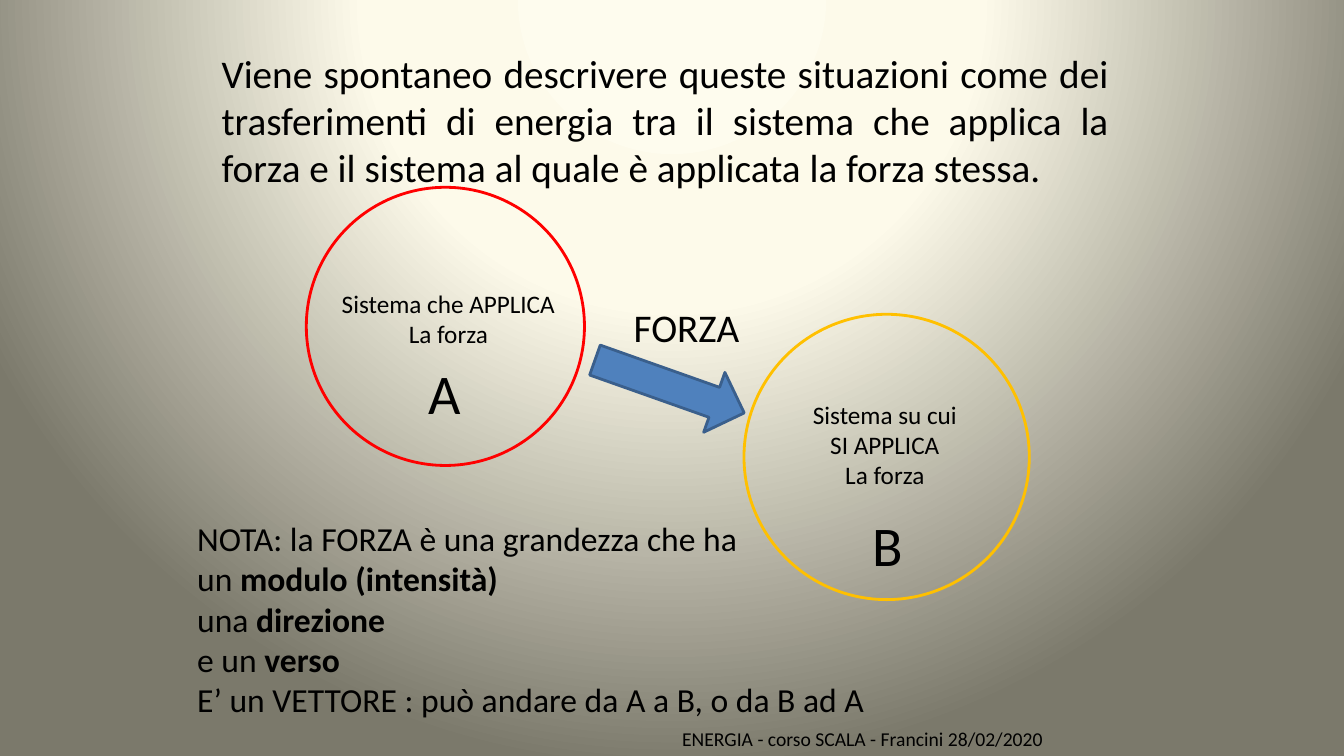
from pptx import Presentation
from pptx import util as u
from pptx.dml.color import RGBColor
from pptx.enum import shapes, text
from pptx.oxml import parse_xml
from pptx.oxml.ns import nsdecls

BLACK = RGBColor(0x00, 0x00, 0x00)
RED = RGBColor(0xFF, 0x00, 0x00)
AMBER = RGBColor(0xFF, 0xC0, 0x00)
BLUE = RGBColor(0x4F, 0x81, 0xBD)
DARK_BLUE = RGBColor(0x3A, 0x5F, 0x8C)
GLOW = [(0, RGBColor(0xFE, 0xFC, 0xEE)), (40, RGBColor(0xFD, 0xFA, 0xEA)),
        (100, RGBColor(0x7B, 0x79, 0x6B))]
LEFT, CENTER = text.PP_ALIGN.LEFT, text.PP_ALIGN.CENTER


def write(frame, lines, size, align):
    """Fill a frame; each line is a list of runs, every second run is bold."""
    for number, line in enumerate(lines):
        paragraph = frame.paragraphs[0] if number == 0 else frame.add_paragraph()
        paragraph.alignment = align
        for position, words in enumerate(line):
            run = paragraph.add_run()
            run.text = words
            run.font.color.rgb = BLACK
            style = {"name": "Calibri", "size": u.Pt(size), "bold": position % 2 == 1}
            for key, value in style.items():
                setattr(run.font, key, value)


def outline(kind, box, color):
    shape = slide.shapes.add_shape(kind, *map(u.Cm, box))
    shape.shadow.inherit = False
    shape.fill.background()
    shape.line.color.rgb = color
    shape.line.width = u.Pt(2)
    return shape


prs = Presentation()
prs.slide_width, prs.slide_height = u.Cm(33.87), u.Cm(19.05)
slide = prs.slides.add_slide(prs.slide_layouts[1])
title = slide.shapes.title.element
title.getparent().remove(title)

# Background: light glow from above the slide
slide.background.fill.gradient()
linear = next(slide.background._cSld.iter("{*}gradFill"))
stops = "".join(f'<a:gs pos="{place * 1000}"><a:srgbClr val="{color}"/></a:gs>'
                for place, color in GLOW)
linear.getparent().replace(linear, parse_xml(
    f'<a:gradFill {nsdecls("a")} rotWithShape="1"><a:gsLst>{stops}</a:gsLst>'
    '<a:path path="circle"><a:fillToRect l="50000" t="-80000" r="50000" b="180000"/>'
    '</a:path></a:gradFill>'))

# Introduction
intro = slide.placeholders[1]
intro.left, intro.top, intro.width, intro.height = map(u.Cm, (5.33, 1.12, 22.86, 17.07))
intro.text_frame.auto_size = text.MSO_AUTO_SIZE.NONE
write(intro.text_frame, [[
    "Viene spontaneo descrivere queste situazioni come dei trasferimenti di energia "
    "tra il sistema che applica la forza e il sistema al quale è applicata la forza stessa."
]], 28, text.PP_ALIGN.JUSTIFY)
intro_format = intro.text_frame.paragraphs[0]._p.get_or_add_pPr()
intro_format.set("marL", "0")
intro_format.set("indent", "0")
intro_format.append(parse_xml(f'<a:buNone {nsdecls("a")}/>'))

# The two systems and the force between them
outline(shapes.MSO_SHAPE.OVAL, (7.72, 4.72, 7.01, 7.01), RED)
outline(shapes.MSO_SHAPE.OVAL, (18.75, 7.92, 7.19, 7.19), AMBER)
force = outline(shapes.MSO_SHAPE.RIGHT_ARROW, (14.88, 8.94, 3.99, 1.6), DARK_BLUE)
force.fill.solid()
force.fill.fore_color.rgb = BLUE
force.rotation = 19.5

# Captions: box, lines of runs, size, alignment, wrapping
captions = [
    ((8.33, 7.14, 5.94, 1.8), [["Sistema che APPLICA"], ["La forza"]], 18, CENTER, False),
    ((20.14, 9.93, 4.32, 2.57), [["Sistema su cui"], ["SI APPLICA"], ["La forza"]],
     18, CENTER, False),
    ((15.72, 7.52, 3.2, 1.45), [["FORZA"]], 28, LEFT, False),
    ((10.54, 8.92, 1.35, 1.96), [["A"]], 40, LEFT, False),
    ((21.74, 12.73, 1.3, 1.96), [["B"]], 40, LEFT, False),
    ((4.72, 12.93, 17.48, 5.38), [
        ["NOTA: la FORZA è una grandezza che ha"],
        ["un ", "modulo (intensità)"],
        ["una ", "direzione"],
        ["e un ", "verso"],
        ["E’ un VETTORE : può andare da A a B, o da B ad A"],
    ], 24, LEFT, False),
    ((16.94, 18.19, 12.7, 0.86), [["ENERGIA - corso SCALA - Francini 28/02/2020"]],
     14, LEFT, True),
]
for box, lines, size, align, wrap in captions:
    caption = slide.shapes.add_textbox(*map(u.Cm, box)).text_frame
    caption.word_wrap = wrap
    caption.auto_size = text.MSO_AUTO_SIZE.SHAPE_TO_FIT_TEXT
    write(caption, lines, size, align)

prs.save("out.pptx")
